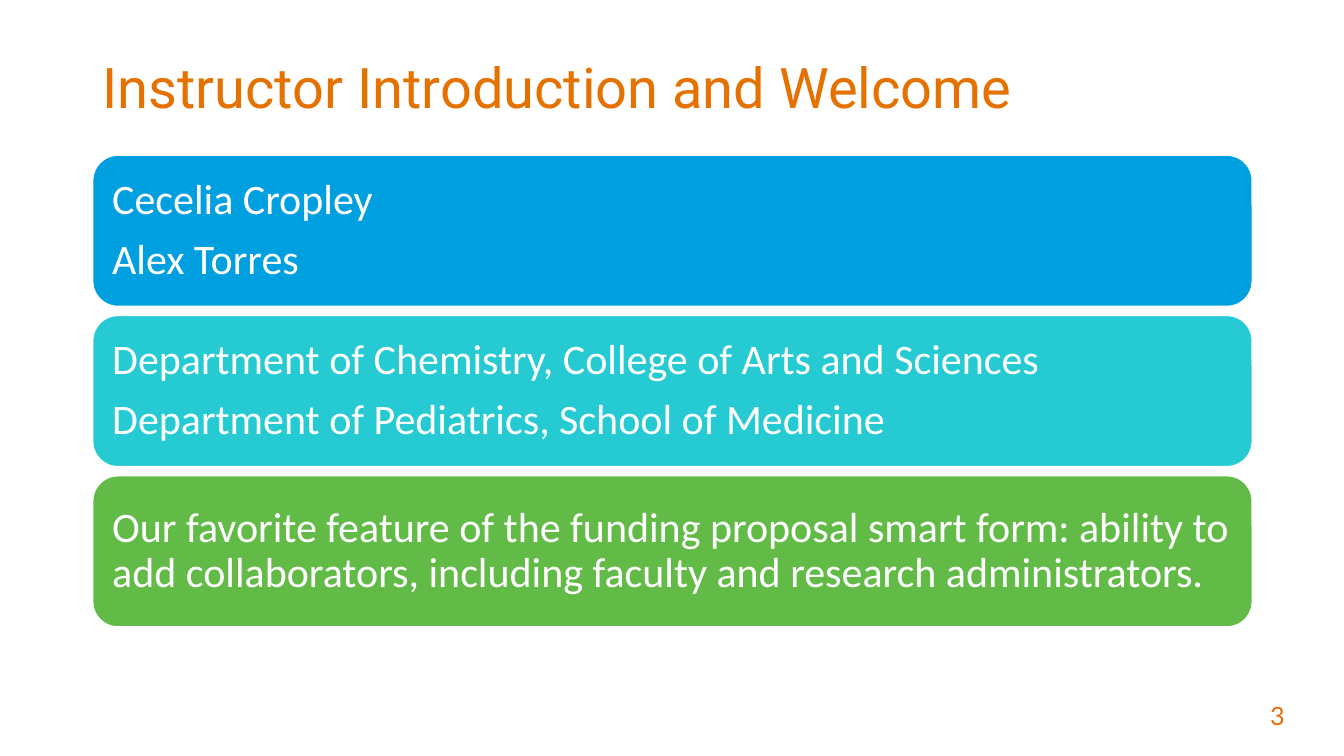
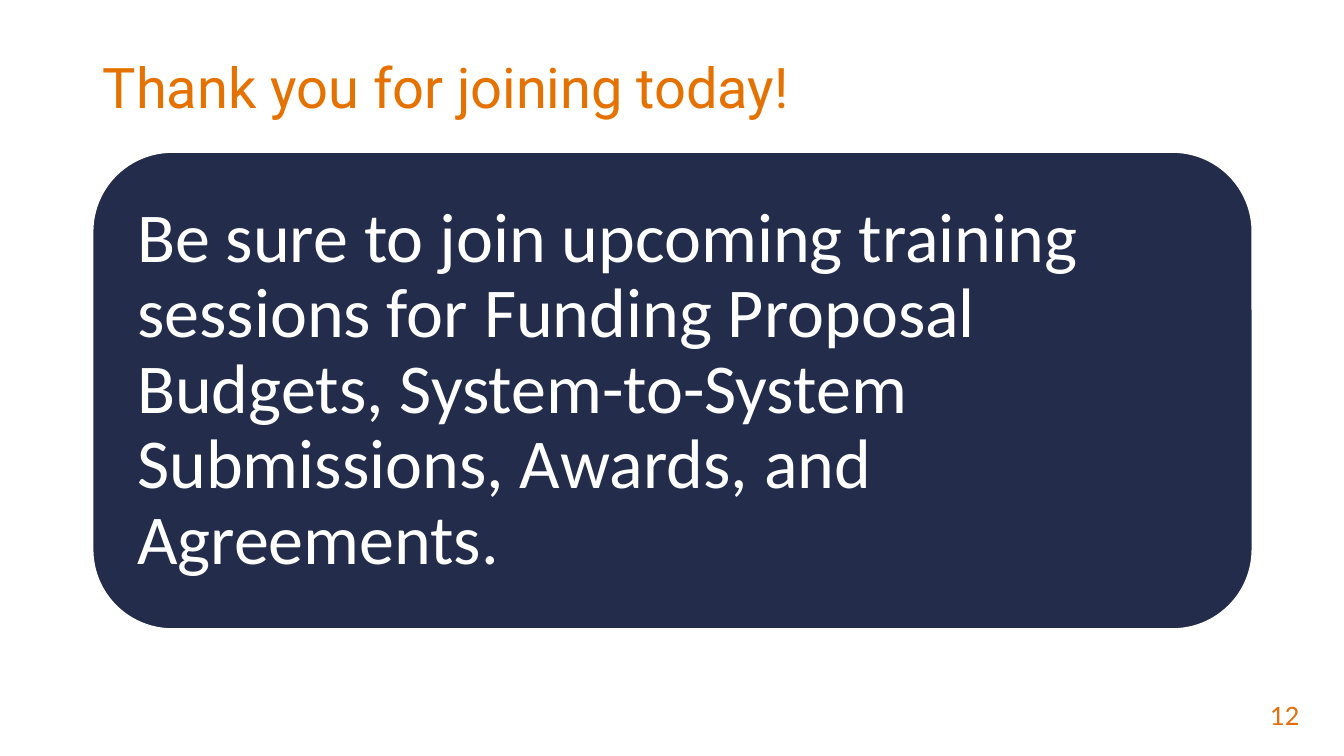
from pptx import Presentation
from pptx.dml.color import RGBColor
from pptx.enum.shapes import MSO_SHAPE
from pptx.enum.text import MSO_ANCHOR, PP_ALIGN
from pptx.util import Inches, Pt

ROUNDED = MSO_SHAPE.ROUNDED_RECTANGLE
MIDDLE = MSO_ANCHOR.MIDDLE
TOP = MSO_ANCHOR.TOP
LEFT = PP_ALIGN.LEFT

COLORS = {
    "title": "E57200",
    "number": "E46C0A",
    "white": "FFFFFF",
    "blue": "009FDF",
    "teal": "25CAD3",
    "green": "62BB46",
    "navy": "232D4B",
}
TITLE_FONT, BODY_FONT, NUMBER_FONT = "Roboto", "Calibri", "Lato"
CONTENT_LEFT, CONTENT_WIDTH = 0.92, 11.5

# Slide 1 cards: name, then lines of text
CARDS = [
    ("blue", ["Cecelia Cropley", "Alex Torres"]),
    ("teal", ["Department of Chemistry, College of Arts and Sciences",
              "Department of Pediatrics, School of Medicine"]),
    ("green", ["Our favorite feature of the funding proposal smart form: ability to "
               "add collaborators, including faculty and research administrators."]),
]
CARD_TOP, CARD_HEIGHT, CARD_STEP = 1.54, 1.5, 1.59


def color(name):
    return RGBColor.from_string(COLORS[name])


def write_lines(frame, lines, font, size, color_name, spacing=1.0, after=0):
    """Fill a text frame with left-aligned paragraphs of one style."""
    frame.word_wrap = True
    for index, line in enumerate(lines):
        paragraph = frame.paragraphs[0] if index == 0 else frame.add_paragraph()
        paragraph.text = line
        paragraph.alignment = LEFT
        paragraph.line_spacing = spacing
        paragraph.space_after = Pt(after)
        paragraph.font.name = font
        paragraph.font.size = Pt(size)
        paragraph.font.color.rgb = color(color_name)


def add_text(slide, left, top, width, height, anchor=TOP):
    box = slide.shapes.add_textbox(Inches(left), Inches(top), Inches(width), Inches(height))
    box.text_frame.vertical_anchor = anchor
    return box.text_frame


def add_card(slide, top, height, fill, lines, size, inset):
    """Rounded card across the content width, holding its own text."""
    card = slide.shapes.add_shape(ROUNDED, Inches(CONTENT_LEFT), Inches(top),
                                  Inches(CONTENT_WIDTH), Inches(height))
    card.shadow.inherit = False
    card.fill.solid()
    card.fill.fore_color.rgb = color(fill)
    card.line.color.rgb = color("white")
    card.line.width = Pt(1)
    frame = card.text_frame
    frame.vertical_anchor = MIDDLE
    frame.margin_left = frame.margin_right = Inches(inset)
    frame.margin_top = frame.margin_bottom = Inches(inset)
    write_lines(frame, lines, BODY_FONT, size, "white", spacing=0.9, after=0.35 * size)


def add_slide(presentation, title, number):
    """Blank slide with the shared title and page number."""
    slide = presentation.slides.add_slide(presentation.slide_layouts[6])
    title_frame = add_text(slide, CONTENT_LEFT, 0.4, CONTENT_WIDTH, 1, MIDDLE)
    write_lines(title_frame, [title], TITLE_FONT, 40, "title", spacing=0.9)
    number_frame = add_text(slide, 12.5, 6.9, 0.51, 0.4)
    number_frame.margin_right = 0
    write_lines(number_frame, [str(number)], NUMBER_FONT, 18, "number")
    return slide


def main():
    presentation = Presentation()
    presentation.slide_width = Inches(13.33)
    presentation.slide_height = Inches(7.5)

    # Instructors
    slide = add_slide(presentation, "Instructor Introduction and Welcome", 3)
    for index, (fill, lines) in enumerate(CARDS):
        add_card(slide, CARD_TOP + index * CARD_STEP, CARD_HEIGHT, fill, lines, 30, 0.12)

    # Closing
    slide = add_slide(presentation, "Thank you for joining today!", 12)
    add_card(slide, 1.51, 4.73, "navy",
             ["Be sure to join upcoming training sessions for Funding Proposal Budgets, "
              "System-to-System Submissions, Awards, and Agreements."], 50, 0.21)

    presentation.save("out.pptx")


if __name__ == "__main__":
    main()
